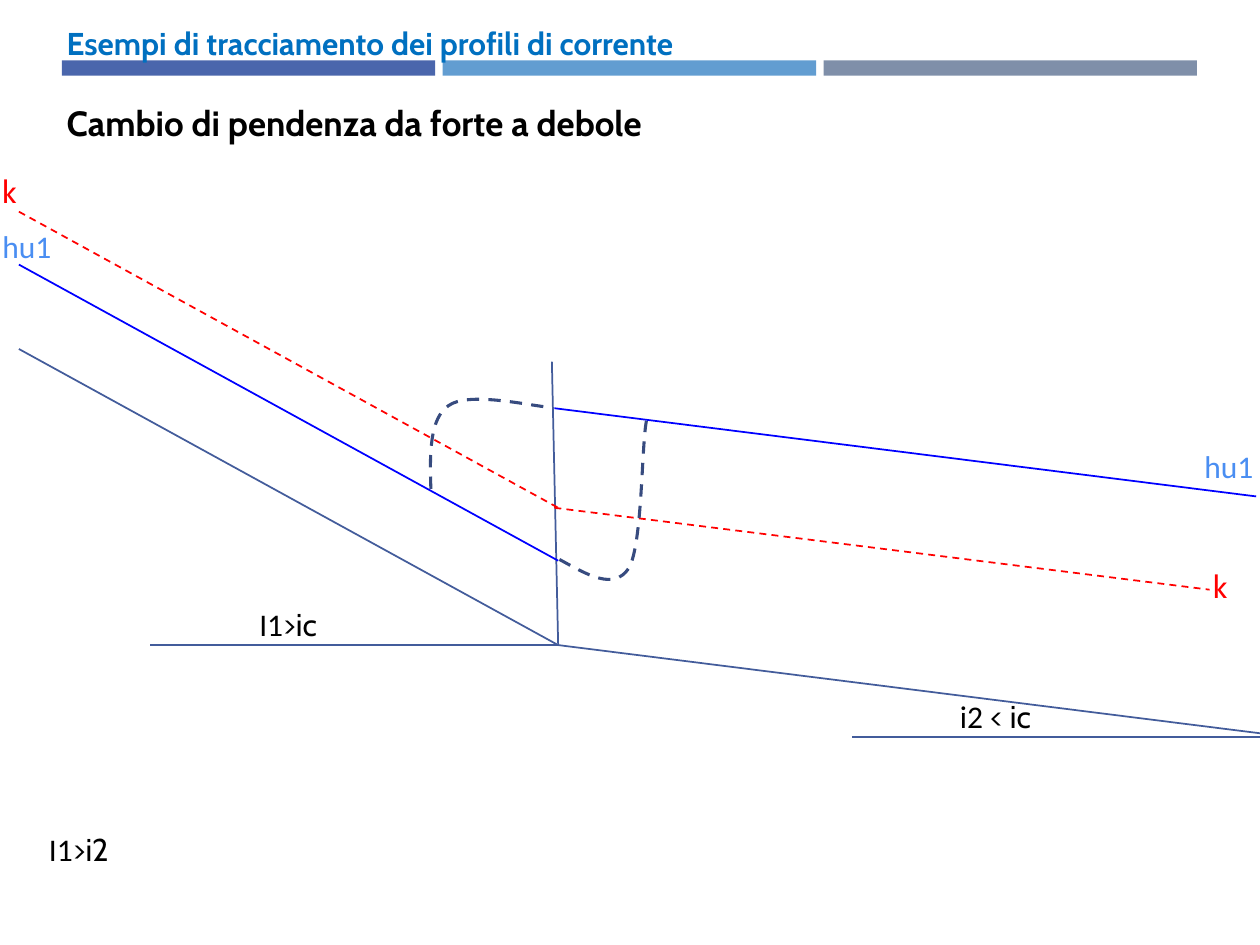
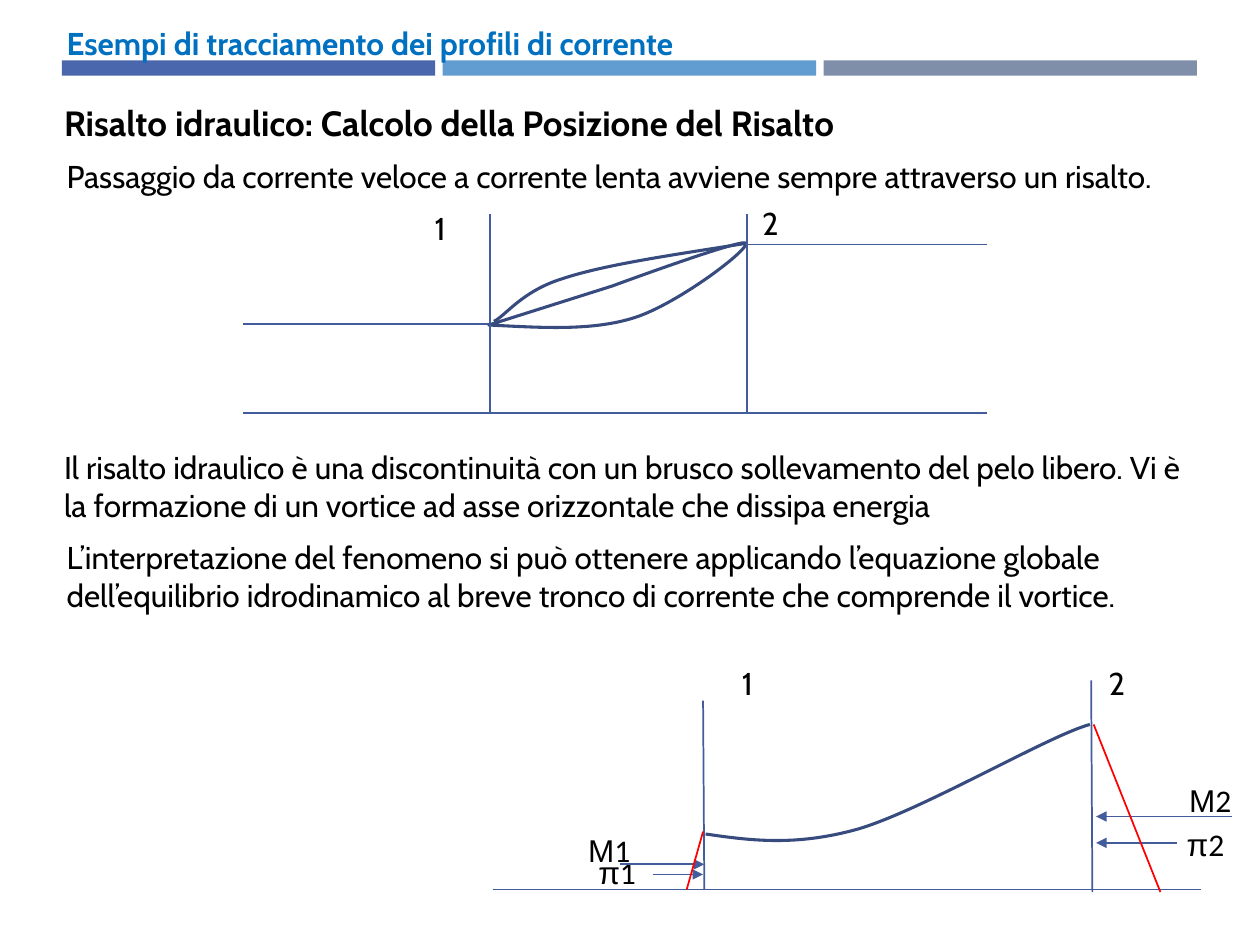
"""Build two slides on water surface profiles and the hydraulic jump."""

from dataclasses import dataclass

from lxml import etree
from pptx import Presentation
from pptx.dml.color import RGBColor
from pptx.enum.dml import MSO_LINE
from pptx.enum.shapes import MSO_CONNECTOR, MSO_SHAPE
from pptx.enum.text import MSO_AUTO_SIZE
from pptx.oxml.ns import qn
from pptx.presentation import Presentation as PresentationType
from pptx.shapes.autoshape import Shape
from pptx.slide import Slide
from pptx.util import Inches, Pt

STRAIGHT = MSO_CONNECTOR.STRAIGHT
RECTANGLE = MSO_SHAPE.RECTANGLE
DASH = MSO_LINE.DASH
FIT_TEXT = MSO_AUTO_SIZE.SHAPE_TO_FIT_TEXT
BLANK_LAYOUT = 6

Point = tuple[float, float]


@dataclass(frozen=True)
class Theme:
    bands: tuple[str, ...] = ("4A66AC", "629DD1", "7F8FA9")
    title: str = "0070C0"
    text: str = "000000"
    outline: str = "435C9B"
    curve: str = "374B7F"
    critical: str = "FF0000"
    uniform: str = "0000FF"
    uniform_label: str = "4A8EF2"
    paper: str = "FFFFFF"
    font: str = "Cabin"
    plain_font: str = "Calibri"
    symbol_font: str = "Arial"
    body_size: float = 18
    heading_size: float = 20
    thin: float = 1
    thick: float = 1.75


THEME = Theme()


@dataclass(frozen=True)
class Label:
    left: float
    top: float
    width: float
    pieces: tuple[tuple[str, str], ...]
    height: float = 0.4
    color: str = THEME.text
    size: float = THEME.body_size
    bold: bool = False
    wrap: bool = True


@dataclass(frozen=True)
class Segment:
    start: Point
    end: Point
    color: str = THEME.outline
    dashed: bool = False
    arrow: bool = False


@dataclass(frozen=True)
class Curve:
    start: Point
    beziers: tuple[tuple[Point, Point, Point], ...]
    dashed: bool = False
    closed: bool = False


Item = Label | Segment | Curve


def cabin(text: str) -> tuple[tuple[str, str], ...]:
    """Return one piece of text in the main font."""
    return ((text, THEME.font),)


def heading(text: str, left: float, width: float) -> Label:
    """Return the bold heading below the bands."""
    return Label(left, 0.76, width, cabin(text), 0.44, size=THEME.heading_size, bold=True)


def critical_label(left: float, top: float) -> Label:
    """Return the mark of the critical depth."""
    return Label(left, top, 0.48, cabin("k"), color=THEME.critical)


def uniform_label(left: float, top: float) -> Label:
    """Return the mark of the uniform depth."""
    return Label(left, top, 0.78, (("hu1", THEME.plain_font),), color=THEME.uniform_label)


def slope_label(left: float, top: float, width: float, slope: str, relation: str) -> Label:
    """Return a slope comparison on one line."""
    pieces = ((slope, THEME.plain_font), (relation, THEME.font))
    return Label(left, top, width, pieces, wrap=False)


def force_label(left: float, top: float, symbol: str, section: str) -> Label:
    """Return a force symbol followed by its section number."""
    pieces = ((symbol, THEME.symbol_font), (section, THEME.plain_font))
    return Label(left, top, 0.57, pieces)


def draw_label(slide: Slide, label: Label) -> None:
    """Draw a text box with one formatted run per piece."""
    box = slide.shapes.add_textbox(
        Inches(label.left), Inches(label.top), Inches(label.width), Inches(label.height)
    )
    box.text_frame.word_wrap = label.wrap
    box.text_frame.auto_size = FIT_TEXT
    paragraph = box.text_frame.paragraphs[0]
    for text, font_name in label.pieces:
        run = paragraph.add_run()
        run.text = text
        run.font.name = font_name
        run.font.size = Pt(label.size)
        run.font.bold = label.bold
        run.font.color.rgb = RGBColor.from_string(label.color)


def draw_segment(slide: Slide, segment: Segment) -> None:
    """Draw a straight line with an optional arrowhead."""
    ends = [Inches(value) for value in (*segment.start, *segment.end)]
    connector = slide.shapes.add_connector(STRAIGHT, *ends)
    connector.line.color.rgb = RGBColor.from_string(segment.color)
    connector.line.width = Pt(THEME.thin)
    if segment.dashed:
        connector.line.dash_style = DASH
    if segment.arrow:
        line = connector.line._get_or_add_ln()
        etree.SubElement(line, qn("a:tailEnd"), type="triangle")
    etree.SubElement(connector._element.spPr, qn("a:effectLst"))


def smooth_outline(shape: Shape) -> None:
    """Turn each three straight steps of an outline into one cubic curve."""
    steps = list(shape._element.iter(qn("a:lnTo")))
    for index in range(0, len(steps), 3):
        cubic = etree.Element(qn("a:cubicBezTo"))
        steps[index].addprevious(cubic)
        for step in steps[index : index + 3]:
            cubic.append(step[0])
            step.getparent().remove(step)


def draw_curve(slide: Slide, curve: Curve) -> None:
    """Draw a smooth outline, filled with the paper colour when closed."""
    controls = [point for bezier in curve.beziers for point in bezier]
    start, *others = [(Inches(x), Inches(y)) for x, y in (curve.start, *controls)]
    builder = slide.shapes.build_freeform(*start)
    builder.add_line_segments(others, close=curve.closed)
    shape = builder.convert_to_shape()
    smooth_outline(shape)
    shape.shadow.inherit = False
    if curve.closed:
        shape.fill.solid()
        shape.fill.fore_color.rgb = RGBColor.from_string(THEME.paper)
    else:
        shape.fill.background()
    shape.line.color.rgb = RGBColor.from_string(THEME.curve)
    shape.line.width = Pt(THEME.thick)
    if curve.dashed:
        shape.line.dash_style = DASH


def draw_bands(slide: Slide) -> None:
    """Draw the equal colour bands below the title."""
    left, right, gap = 0.49, 9.5, 0.06
    count = len(THEME.bands)
    width = (right - left - gap * (count - 1)) / count
    for index, color in enumerate(THEME.bands):
        band = slide.shapes.add_shape(
            RECTANGLE, Inches(left + index * (width + gap)), Inches(0.48), Inches(width), Inches(0.12)
        )
        band.shadow.inherit = False
        band.fill.solid()
        band.fill.fore_color.rgb = RGBColor.from_string(color)
        band.line.fill.background()


def add_slide(presentation: PresentationType, items: list[Item]) -> None:
    """Add a slide with the shared title and the given items."""
    slide = presentation.slides.add_slide(presentation.slide_layouts[BLANK_LAYOUT])
    draw_bands(slide)
    title = cabin("Esempi di tracciamento dei profili di corrente")
    draw_label(slide, Label(0.43, 0.14, 6.06, title, color=THEME.title, bold=True))
    drawers = {Label: draw_label, Segment: draw_segment, Curve: draw_curve}
    for item in items:
        drawers[type(item)](slide, item)


def slope_change_items() -> list[Item]:
    """Return the change from a steep to a mild slope."""
    lower_jump = (
        ((4.66, 4.56), (4.87, 4.69), (4.99, 4.51)),
        ((5.1, 4.32), (5.09, 3.54), (5.13, 3.34)),
    )
    upper_jump = (
        ((3.41, 3.6), (3.41, 3.32), (3.56, 3.22)),
        ((3.71, 3.11), (4.16, 3.21), (4.33, 3.23)),
    )
    return [
        heading("Cambio di pendenza da forte a debole", 0.43, 5.67),
        Segment((0.15, 2.77), (4.43, 5.12)),
        Segment((4.43, 5.12), (10, 5.82)),
        Segment((4.38, 2.87), (4.43, 5.12)),
        Segment((0.15, 1.68), (4.43, 4.03), THEME.critical, dashed=True),
        Segment((4.4, 4.03), (9.6, 4.68), THEME.critical, dashed=True),
        Segment((0.15, 2.1), (4.43, 4.45), THEME.uniform),
        Segment((4.4, 3.24), (9.97, 3.94), THEME.uniform),
        critical_label(-0.08, 1.32),
        uniform_label(-0.08, 1.75),
        Segment((10.01, 5.85), (6.76, 5.85)),
        slope_label(7.52, 5.48, 0.84, "i2", " < ic"),
        Segment((4.44, 5.12), (1.19, 5.12)),
        slope_label(1.96, 4.75, 0.7, "I1", ">ic"),
        critical_label(9.53, 4.45),
        uniform_label(9.46, 3.5),
        Curve((4.44, 4.44), lower_jump, dashed=True),
        Curve((3.42, 3.88), upper_jump, dashed=True),
        slope_label(0.29, 6.54, 0.72, "I1", ">i2"),
    ]


def jump_items() -> list[Item]:
    """Return the hydraulic jump and its balance of forces."""
    passage = "Passaggio da corrente veloce a corrente lenta avviene sempre attraverso un risalto."
    definition = (
        "Il risalto idraulico è una discontinuità con un brusco sollevamento del pelo libero. "
        "Vi è la formazione di un vortice ad asse orizzontale che dissipa energia"
    )
    reading = (
        "L’interpretazione del fenomeno si può ottenere applicando l’equazione globale "
        "dell’equilibrio idrodinamico al breve tronco di corrente che comprende il vortice."
    )
    vortex = (
        ((4.29, 2.6), (4.7, 2.63), (5.04, 2.52)),
        ((5.38, 2.41), (5.95, 1.98), (5.92, 1.93)),
        ((5.89, 1.89), (4.86, 2.27), (4.86, 2.27)),
    )
    crest = (
        ((5.36, 2.02), (4.8, 2.1), (4.47, 2.21)),
        ((4.14, 2.31), (4.01, 2.51), (3.92, 2.55)),
    )
    surface = (
        ((5.95, 6.67), (6.31, 6.72), (6.81, 6.58)),
        ((7.32, 6.43), (8.32, 5.84), (8.65, 5.75)),
    )
    forces = ((4.92, 5.59, 6.86), (5.18, 5.58, 6.94), (9.78, 8.7, 6.48), (9.34, 8.7, 6.69))
    return [
        heading("Risalto idraulico: Calcolo della Posizione del Risalto", 0.41, 8.45),
        Label(0.43, 1.2, 9.45, cabin(passage)),
        Segment((1.93, 3.28), (7.83, 3.28)),
        Segment((1.93, 2.57), (3.9, 2.57)),
        Segment((5.87, 1.94), (7.83, 1.94)),
        Curve((3.88, 2.58), vortex, closed=True),
        Curve((5.93, 1.93), crest),
        Label(0.41, 3.51, 9.18, cabin(definition), 0.71),
        Segment((5.58, 5.56), (5.59, 7.06)),
        Segment((8.66, 5.4), (8.67, 7.08)),
        Curve((5.6, 6.62), surface),
        Segment((3.91, 7.06), (9.53, 7.06)),
        force_label(4.65, 6.72, "π", "1"),
        force_label(9.32, 6.5, "π", "2"),
        force_label(4.57, 6.55, "Μ", "1"),
        force_label(9.34, 6.15, "Μ", "2"),
        Label(5.79, 5.22, 0.47, cabin("1")),
        Label(8.7, 5.22, 0.47, cabin("2")),
        *(Segment((start, y), (end, y), arrow=True) for start, end, y in forces),
        Segment((5.58, 6.6), (5.45, 7.06), THEME.critical),
        Segment((8.68, 5.75), (9.21, 7.08), THEME.critical),
        Label(0.43, 4.22, 9.59, cabin(reading), 0.71),
        *(Segment((x, 1.7), (x, 3.28)) for x in (3.89, 5.93)),
        Label(3.35, 1.61, 0.31, cabin("1")),
        Label(5.95, 1.57, 0.31, cabin("2")),
    ]


def main() -> None:
    """Build and save the presentation."""
    presentation = Presentation()
    presentation.slide_width, presentation.slide_height = Inches(10), Inches(7.5)
    for items in (slope_change_items(), jump_items()):
        add_slide(presentation, items)
    presentation.save("out.pptx")


if __name__ == "__main__":
    main()
